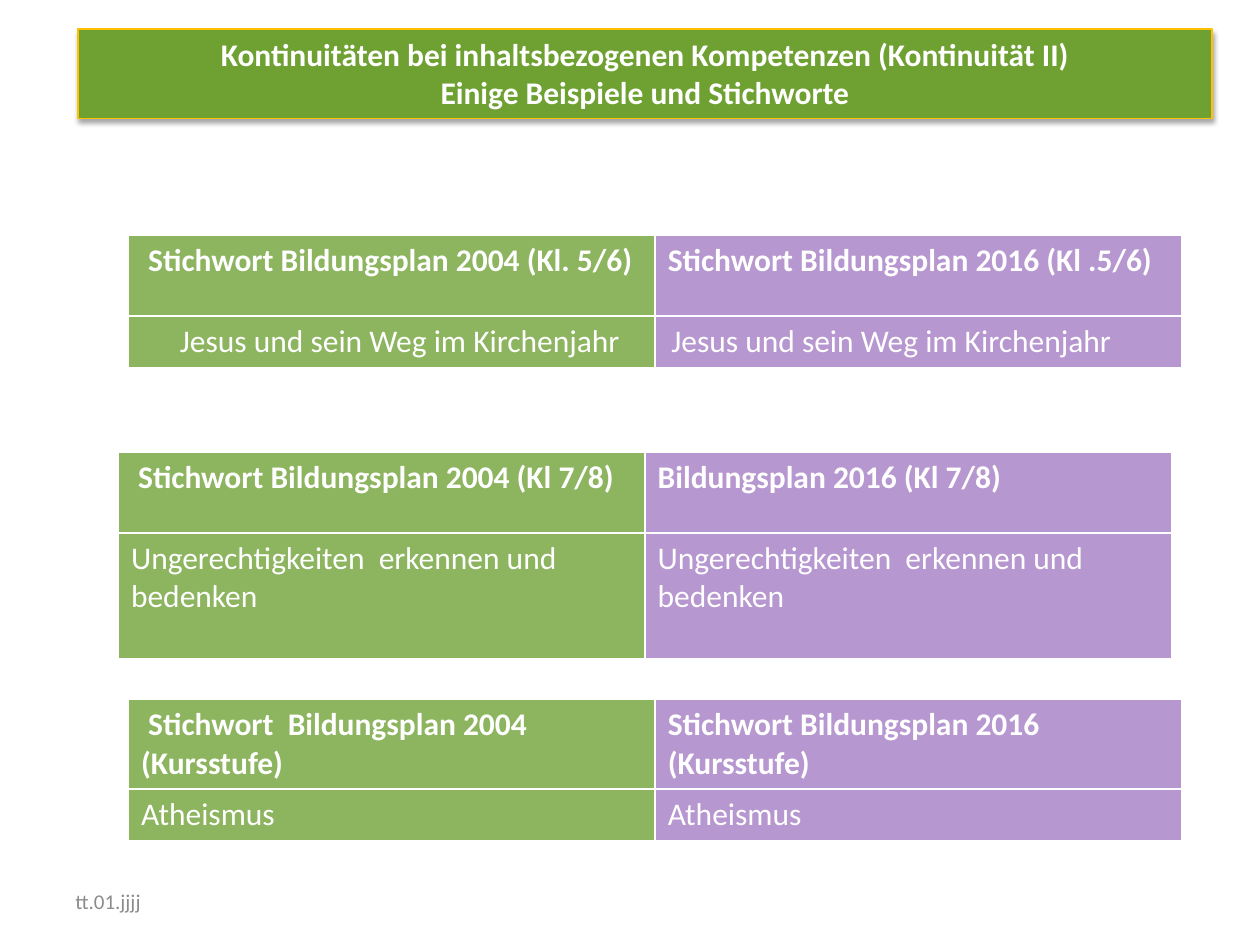
from dataclasses import dataclass

import pptx
import pptx.dml.color
import pptx.enum.shapes
import pptx.enum.text
import pptx.oxml
import pptx.oxml.ns
import pptx.util
from lxml import etree

Inches = pptx.util.Inches
Pt = pptx.util.Pt
RGBColor = pptx.dml.color.RGBColor
qn = pptx.oxml.ns.qn

GREEN = RGBColor(0x6E, 0xA0, 0x32)
PURPLE = RGBColor(0x70, 0x30, 0xA0)
GOLD = RGBColor(0xFF, 0xC0, 0x00)
WHITE = RGBColor(0xFF, 0xFF, 0xFF)
GREY = RGBColor(0x8C, 0x8C, 0x8C)
FONT = "Calibri"
COLUMN_WIDTH = 4.18
COLUMN_FILLS = ((GREEN, 78), (PURPLE, 50))


@dataclass
class Comparison:
    left: float
    top: float
    heights: tuple[float, float]
    rows: tuple[tuple[str, str], tuple[str, str]]


@dataclass
class Label:
    left: float
    top: float
    width: float
    text: str
    size: int = 18
    color: RGBColor = WHITE
    anchor: pptx.enum.text.MSO_ANCHOR = pptx.enum.text.MSO_ANCHOR.TOP


COMPARISONS = (
    Comparison(1.02, 1.87, (0.64, 0.41), (
        (" Stichwort Bildungsplan 2004 (Kl. 5/6)", "Stichwort Bildungsplan 2016 (Kl .5/6)"),
        ("", ""),
    )),
    Comparison(0.94, 3.59, (0.64, 1.0), (
        (" Stichwort Bildungsplan 2004 (Kl 7/8)", "Bildungsplan 2016 (Kl 7/8)"),
        ("Ungerechtigkeiten  erkennen und bedenken",) * 2,
    )),
    Comparison(1.02, 5.55, (0.7, 0.41), (
        (" Stichwort  Bildungsplan 2004 (Kursstufe)", "Stichwort Bildungsplan 2016 (Kursstufe)"),
        ("Atheismus", "Atheismus"),
    )),
)

LABELS = (
    Label(0.5, 6.95, 2.33, "tt.01.jjjj", 12, GREY, pptx.enum.text.MSO_ANCHOR.MIDDLE),
    Label(1.33, 2.5, 4.06, "Jesus und sein Weg im Kirchenjahr"),
    Label(5.23, 2.5, 3.98, "Jesus und sein Weg im Kirchenjahr"),
)


def style_paragraph(p, size: int = 18, color: RGBColor = WHITE, bold: bool = False) -> None:
    p.font.name = FONT
    p.font.size = Pt(size)
    p.font.bold = bold
    p.font.color.rgb = color


def add_shadow(sp) -> None:
    sp.shadow.inherit = False
    effects = sp.element.spPr.find(qn("a:effectLst"))
    shadow = etree.SubElement(
        effects, qn("a:outerShdw"), blurRad=str(Pt(3.1)), dist=str(Pt(1.8)),
        dir="5400000", rotWithShape="0")
    color = etree.SubElement(shadow, qn("a:srgbClr"), val="000000")
    etree.SubElement(color, qn("a:alpha"), val="35000")


def add_title(s, lines: tuple[str, ...]) -> None:
    sp = s.shapes.add_shape(pptx.enum.shapes.MSO_SHAPE.RECTANGLE,
                            Inches(0.62), Inches(0.23), Inches(9), Inches(0.71))
    sp.fill.solid()
    sp.fill.fore_color.rgb = GREEN
    sp.line.color.rgb = GOLD
    sp.line.width = Pt(0.75)
    add_shadow(sp)
    tf = sp.text_frame
    tf.word_wrap = True
    tf.vertical_anchor = pptx.enum.text.MSO_ANCHOR.TOP
    tf.text = "\n".join(lines)
    for p in tf.paragraphs:
        p.alignment = pptx.enum.text.PP_ALIGN.CENTER
        style_paragraph(p, bold=True)


def fill_cell(cell, color: RGBColor, opacity: int) -> None:
    cell.fill.solid()
    cell.fill.fore_color.rgb = color
    solid = cell.fill._xPr.find(qn("a:solidFill"))
    etree.SubElement(solid[0], qn("a:alpha"), val=str(opacity * 1000))


def add_comparison(s, item: Comparison) -> None:
    table = s.shapes.add_table(
        len(item.rows), len(COLUMN_FILLS), Inches(item.left), Inches(item.top),
        Inches(COLUMN_WIDTH * len(COLUMN_FILLS)), Inches(sum(item.heights))).table
    table.horz_banding = False
    for column in table.columns:
        column.width = Inches(COLUMN_WIDTH)
    for i, (height, texts) in enumerate(zip(item.heights, item.rows)):
        table.rows[i].height = Inches(height)
        for j, (text, (color, opacity)) in enumerate(zip(texts, COLUMN_FILLS)):
            cell = table.cell(i, j)
            cell.text = text
            fill_cell(cell, color, opacity)
            style_paragraph(cell.text_frame.paragraphs[0], bold=i == 0)


def add_label(s, label: Label) -> None:
    tf = s.shapes.add_textbox(Inches(label.left), Inches(label.top),
                              Inches(label.width), Inches(0.4)).text_frame
    tf.word_wrap = True
    tf.vertical_anchor = label.anchor
    tf.text = label.text
    style_paragraph(tf.paragraphs[0], label.size, label.color)


def main() -> None:
    prs = pptx.Presentation()
    prs.slide_width, prs.slide_height = Inches(10), Inches(7.5)
    s = prs.slides.add_slide(prs.slide_layouts[6])
    add_title(s, ("Kontinuitäten bei inhaltsbezogenen Kompetenzen (Kontinuität II)",
                  "Einige Beispiele und Stichworte"))
    for item in COMPARISONS:
        add_comparison(s, item)
    for label in LABELS:
        add_label(s, label)
    prs.save("out.pptx")


if __name__ == "__main__":
    main()
